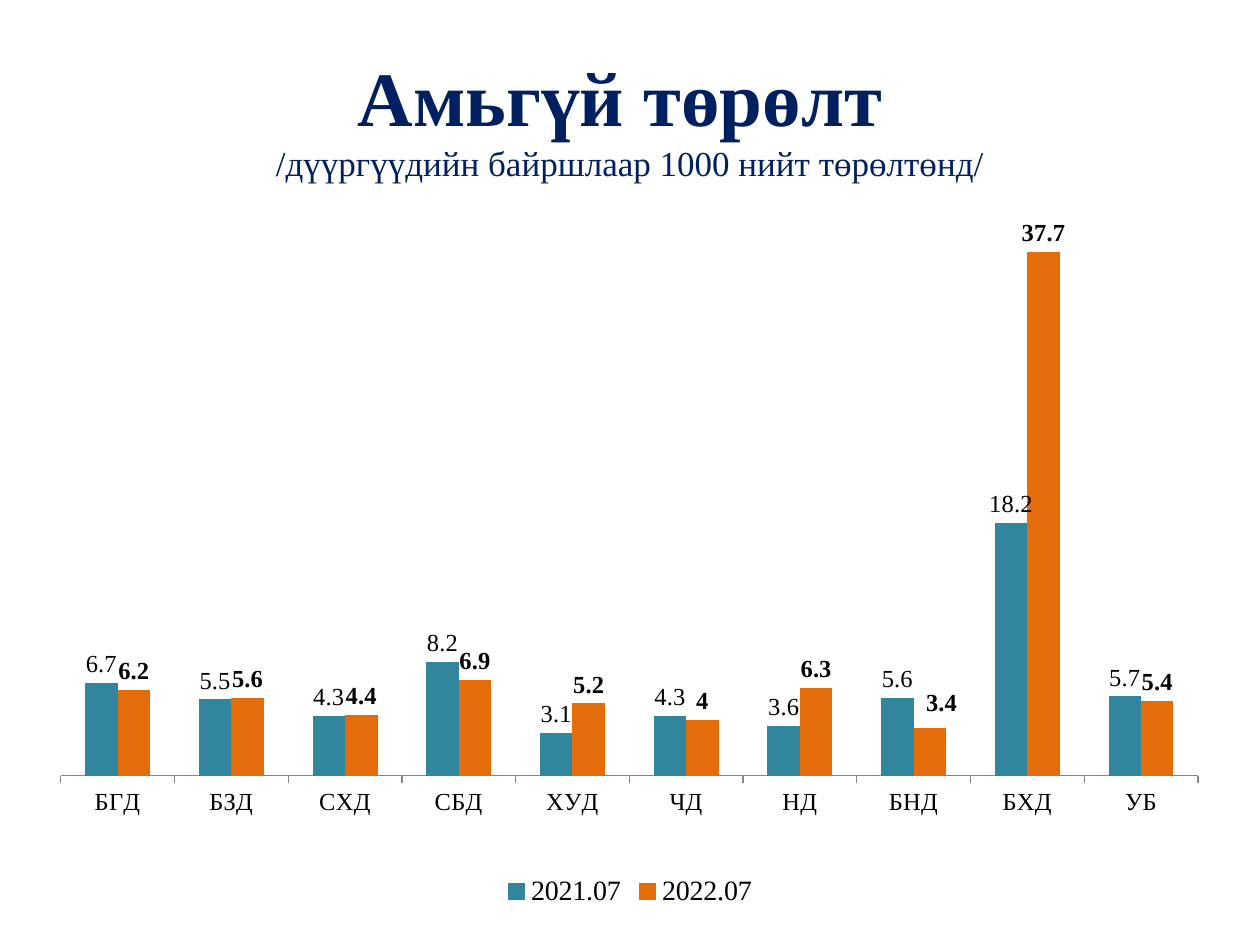
from dataclasses import dataclass
from lxml.etree import SubElement
from pptx import Presentation
from pptx.chart.data import CategoryChartData as Data
from pptx.dml.color import RGBColor as RGB
from pptx.enum.chart import XL_CHART_TYPE as Kind
from pptx.enum.chart import XL_LABEL_POSITION as Spot
from pptx.enum.chart import XL_LEGEND_POSITION as Side
from pptx.enum.chart import XL_TICK_MARK as Tick
from pptx.enum.text import MSO_ANCHOR as Anchor
from pptx.enum.text import PP_ALIGN as Align
from pptx.util import Pt

PX = 914400 / 126  # EMU in one px


@dataclass(frozen=True)
class Theme:
    face: str = "Times New Roman"
    navy: str = "002060"
    ink: str = "000000"
    axis: str = "868686"
    teal: str = "31859C"
    amber: str = "E46C0A"
    title: int = 44
    sub: int = 20
    legend: int = 16
    label: int = 14


def emu(*sizes):
    return [round(size * PX) for size in sizes]


def style(font, face, size, color, bold=False):
    font.name, font.size, font.bold = face, Pt(size), bold
    font.color.rgb = RGB.from_string(color)


def write(para, text, **form):
    run = para.add_run()
    run.text = text
    style(run.font, **form)


def place(element, after, **parts):
    """Add a manual layout to a chart element, behind its child number `after`."""
    layout = SubElement(element, element.tag.split("}")[0] + "}layout")
    space = layout.tag.removesuffix("layout")
    manual = SubElement(layout, space + "manualLayout")
    for name, value in parts.items():
        SubElement(manual, space + name, val=str(value))
    element.insert(after, layout)


class Board:
    def __init__(self, slide, theme):
        self.slide, self.theme = slide, theme

    def title(self, box, head, sub):
        look = self.theme
        frame = self.slide.shapes.add_textbox(*emu(*box)).text_frame
        frame.word_wrap = True
        frame.vertical_anchor = Anchor.MIDDLE
        para = frame.paragraphs[0]
        para.alignment = Align.CENTER
        form = dict(face=look.face, color=look.navy)
        write(para, head, size=look.title, bold=True, **form)
        para.add_line_break()
        write(para, sub, size=look.sub, **form)

    def columns(self, box, cats, rows, top):
        """Draw clustered columns; rows hold name, values, colour and bold."""
        look = self.theme
        data = Data()
        data.categories = cats
        for name, vals, *_ in rows:
            data.add_series(name, vals)
        shape = self.slide.shapes.add_chart(
            Kind.COLUMN_CLUSTERED, *emu(*box), data)
        chart = shape.chart
        form = dict(face=look.face, color=look.ink)
        style(chart.font, size=look.label, **form)
        chart.has_title = False
        chart.has_legend = True
        chart.legend.position = Side.BOTTOM
        chart.legend.include_in_layout = False
        style(chart.legend.font, size=look.legend, **form)

        scale = chart.value_axis
        scale.minimum_scale, scale.maximum_scale = 0, top
        scale.has_major_gridlines = False
        scale.visible = False
        axis = chart.category_axis
        axis.major_tick_mark = Tick.OUTSIDE
        axis.format.line.color.rgb = RGB.from_string(look.axis)

        plot = chart.plots[0]
        plot.gap_width, plot.overlap = 150, 0
        plot.vary_by_categories = False
        for series, (_, _, color, bold) in zip(plot.series, rows):
            series.format.fill.solid()
            series.format.fill.fore_color.rgb = RGB.from_string(color)
            labels = series.data_labels
            labels.show_value = True
            labels.position = Spot.OUTSIDE_END
            style(labels.font, size=look.label, bold=bold, **form)
        return chart

    def nudge(self, series, index, x, y):
        """Shift one bold value label by fractions of the chart size."""
        look = self.theme
        label = series.points[index].data_label
        style(label.font, look.face, look.label, look.ink, bold=True)
        label.position = Spot.OUTSIDE_END
        spot = series.data_labels._element.dLbl_lst[0]
        place(spot, 1, x=x, y=y)


def main():
    deck = Presentation()
    deck.slide_width, deck.slide_height = emu(1260, 945)
    look = Theme()
    board = Board(deck.slides.add_slide(deck.slide_layouts[6]), look)
    board.title((63, 38, 1134, 157), "Амьгүй төрөлт ",
                "/дүүргүүдийн байршлаар 1000 нийт төрөлтөнд/")

    cats = ["БГД", "БЗД", "СХД", "СБД", "ХУД", "ЧД", "НД", "БНД", "БХД", "УБ"]
    rows = [
        ("2021.07", [6.7, 5.5, 4.3, 8.2, 3.1, 4.3, 3.6, 5.6, 18.2, 5.7],
         look.teal, False),
        ("2022.07", [6.2, 5.6, 4.4, 6.9, 5.2, 4, 6.3, 3.4, 37.7, 5.4],
         look.amber, True),
    ]
    chart = board.columns((42, 199, 1176, 714), cats, rows, top=40)
    board.nudge(chart.plots[0].series[1], cats.index("БНД"), 0.01, -0.01)

    area = chart._chartSpace.chart.plotArea
    for old in area.xpath("c:layout"):
        area.remove(old)
    place(area, 0, layoutTarget="inner", xMode="edge", yMode="edge",
          x=0.016, y=0.029, w=0.967, h=0.779)
    deck.save("out.pptx")


if __name__ == "__main__":
    main()
